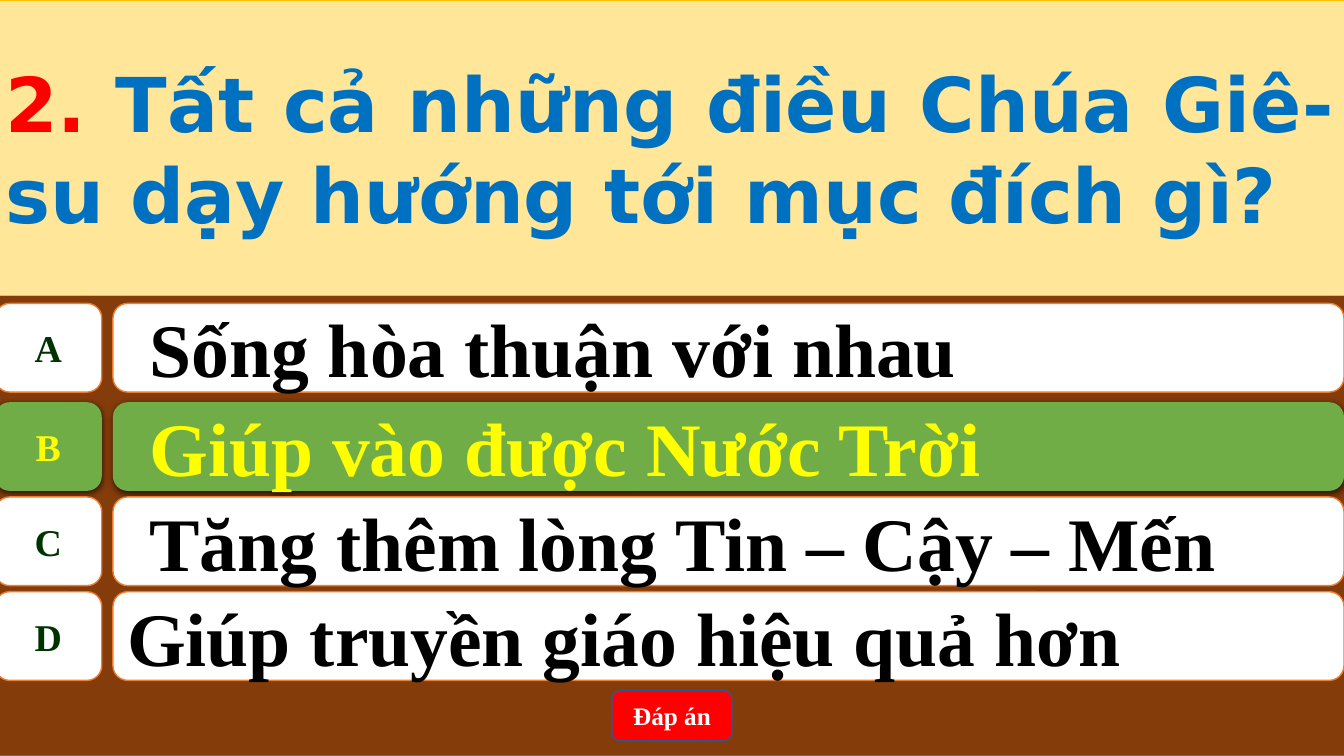
"""Build a quiz slide with a question, four answers and the right one lit up."""
from dataclasses import dataclass
from typing import Optional

from lxml.etree import SubElement as Sub
from pptx import Presentation
from pptx.dml.color import RGBColor as Color
from pptx.enum.shapes import MSO_SHAPE as Kind
from pptx.enum.text import MSO_ANCHOR as Anchor, MSO_AUTO_SIZE as Fit, PP_ALIGN as Align
from pptx.oxml.ns import qn
from pptx.util import Emu, Pt

PX = 9144
WIDE, HIGH = 1333, 750
LEFT, SPAN = -5, 1339
ROW = 88
SERIF, SANS = "Times New Roman", "DejaVu Sans"


@dataclass
class Answer:
    mark: str
    words: str
    top: int
    dent: bool = True
    right: bool = False


ANSWERS = [
    Answer("A", "Sống hòa thuận với nhau", 301),
    Answer("B", "Giúp vào được Nước Trời", 399, right=True),
    Answer("C", "Tăng thêm lòng Tin – Cậy – Mến", 493),
    Answer("D", "Giúp truyền giáo hiệu quả hơn", 587, dent=False),
]


def px(size: int) -> Emu:
    return Emu(size * PX)


def hue(code: str) -> Color:
    return Color.from_string(code)


def paint(shape, fill: str, line: Optional[str], width: float = 1) -> None:
    shape.fill.solid()
    shape.fill.fore_color.rgb = hue(fill)
    if line is None:
        shape.line.fill.background()
    else:
        shape.line.color.rgb = hue(line)
        shape.line.width = Pt(width)


def draw(shapes, kind: Kind, box: tuple[int, int, int, int], fill: str,
         line: Optional[str]):
    shape = shapes.add_shape(kind, *map(px, box))
    shape.shadow.inherit = False
    paint(shape, fill, line)
    return shape


def shade(shape) -> None:
    glow = Sub(shape._element.spPr.find(qn("a:effectLst")), qn("a:outerShdw"),
               blurRad=str(Pt(4.5)), dist=str(Pt(1.5)), dir="5400000",
               algn="ctr", rotWithShape="0")
    tint = Sub(glow, qn("a:srgbClr"), val="000000")
    Sub(tint, qn("a:alpha"), val="63000")


def write(shape, *runs: tuple[str, str], size: int, font: str = SERIF,
          align: Align = Align.LEFT, wrap: bool = True, dent: bool = False) -> None:
    frame = shape.text_frame
    frame.auto_size = Fit.NONE
    frame.word_wrap = wrap
    frame.vertical_anchor = Anchor.MIDDLE
    para = frame.paragraphs[0]
    para.alignment = align
    if dent:
        para.level = 1
        props = para._p.get_or_add_pPr()
        props.set("marL", str(px(50)))
        props.set("indent", str(px(-28)))
    for words, code in runs:
        run = para.add_run()
        run.text = words
        run.font.size = Pt(size)
        run.font.name = font
        run.font.bold = True
        run.font.color.rgb = hue(code)


def place(shapes, answer: Answer) -> None:
    group = shapes.add_group_shape().shapes
    fill, line = ("70AD47", None) if answer.right else ("FFFFFF", "ED7D31")
    bar = draw(group, Kind.ROUNDED_RECTANGLE, (112, answer.top, 1221, ROW), fill, line)
    badge = draw(group, Kind.FLOWCHART_ALTERNATE_PROCESS,
                 (LEFT, answer.top, 106, ROW), fill, line)
    if answer.right:
        shade(bar)
        shade(badge)
    write(bar, (answer.words, "FFFF00" if answer.right else "000000"),
          size=54, dent=answer.dent)
    write(badge, (answer.mark, "FFFF00" if answer.right else "003300"),
          size=27, align=Align.CENTER, wrap=False)


def main() -> None:
    deck = Presentation()
    deck.slide_width, deck.slide_height = px(WIDE), px(HIGH)
    shapes = deck.slides.add_slide(deck.slide_layouts[5]).shapes
    draw(shapes, Kind.RECTANGLE, (LEFT, 0, SPAN, HIGH), "843C0B", "43739E")

    title = shapes.title
    title.left, title.top, title.width, title.height = map(px, (LEFT, 0, SPAN, 293))
    paint(title, "FFE699", "FFC000", 0.5)
    write(title, ("2. ", "FF0000"),
          ("Tất cả những điều Chúa Giê-su dạy hướng tới mục đích gì?", "0070C0"),
          size=54, font=SANS, align=Align.JUSTIFY)
    shapes._spTree.append(title._element)

    for answer in ANSWERS:
        place(shapes, answer)

    button = draw(shapes, Kind.ROUNDED_RECTANGLE, (607, 685, 119, 50), "FF0000", "325491")
    write(button, ("Đáp án", "FFFFFF"), size=18, align=Align.CENTER)
    deck.save("out.pptx")


if __name__ == "__main__":
    main()
